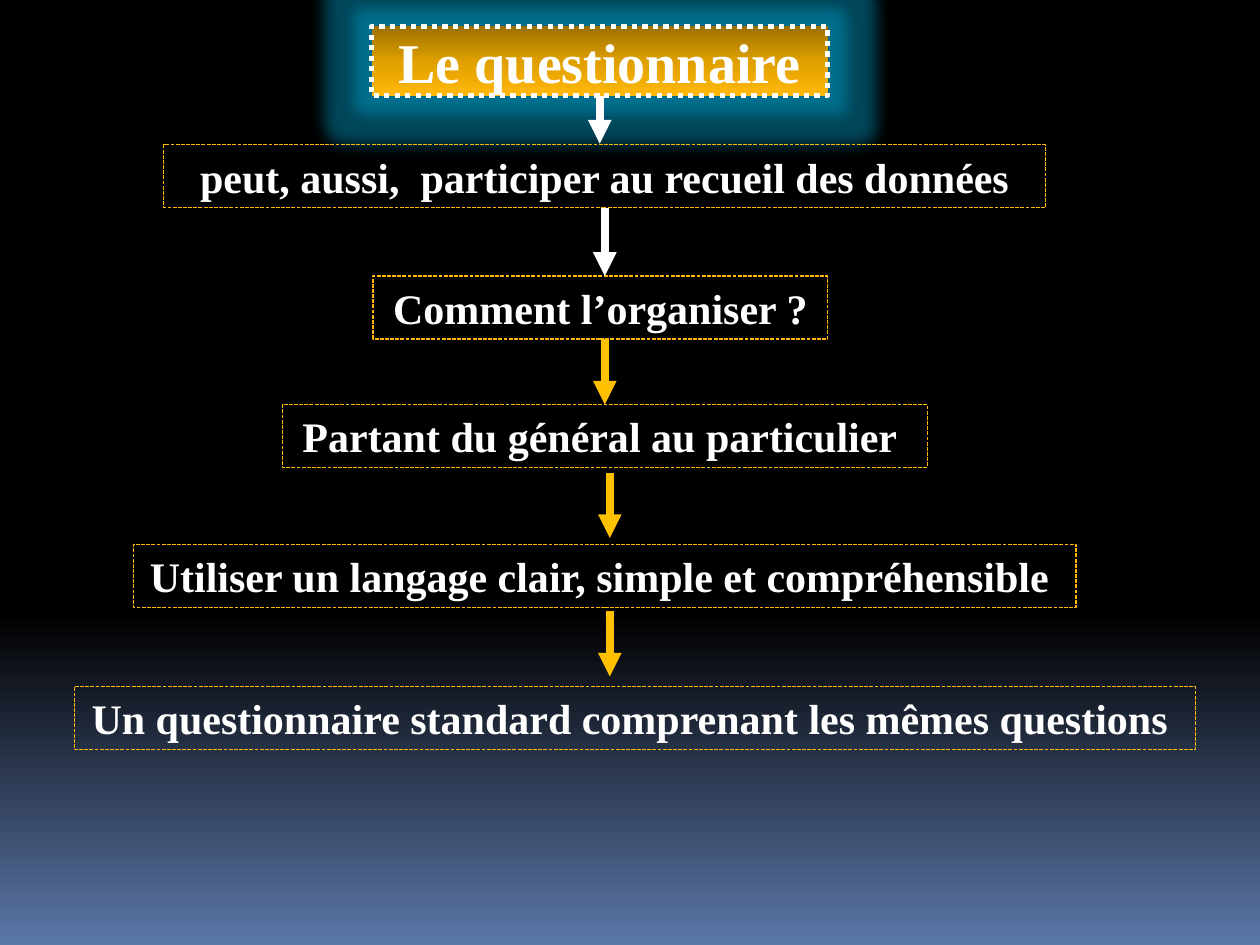
from lxml import etree
from pptx import Presentation
from pptx import util as u
from pptx.dml.color import RGBColor
from pptx.enum import dml, shapes, text
from pptx.oxml.ns import qn

WHITE = RGBColor(0xFF, 0xFF, 0xFF)
BLACK = RGBColor(0, 0, 0)
AMBER = RGBColor(0xFE, 0xB8, 0x0A)
GOLD = RGBColor(0xFF, 0xC0, 0x00)
GOLD_DARK = RGBColor(0x9C, 0x70, 0x00)
GOLD_MID = RGBColor(0xDF, 0x9F, 0x00)
GOLD_LIGHT = RGBColor(0xFF, 0xB8, 0x09)
BLUE = RGBColor(0x5B, 0x77, 0xA8)
GLOW = RGBColor(0x00, 0xAD, 0xDC)
FONT = "Times New Roman"
BOX_H = 0.5


def set_gradient(fill, owner, stops):
    """Fill from top to bottom with (percent, colour) stops."""
    fill.gradient()
    fill.gradient_angle = 270
    gs_list = next(owner.iter(qn("a:gsLst")))
    for gs in list(gs_list):
        gs_list.remove(gs)
    for pos, color in stops:
        gs = etree.SubElement(gs_list, qn("a:gs"), pos=str(pos * 1000))
        etree.SubElement(gs, qn("a:srgbClr"), val=str(color))


def add_glow(sp, color, radius, alpha):
    effects = sp._element.spPr.find(qn("a:effectLst"))
    glow = etree.SubElement(effects, qn("a:glow"), rad=str(int(radius)))
    clr = etree.SubElement(glow, qn("a:srgbClr"), val=str(color))
    etree.SubElement(clr, qn("a:alpha"), val=str(alpha * 1000))


def add_box(s, box, label, size, line_color, line_width, dash):
    sp = s.shapes.add_shape(shapes.MSO_SHAPE.RECTANGLE, *map(u.Inches, box))
    sp.shadow.inherit = False
    sp.fill.background()
    sp.line.color.rgb = line_color
    sp.line.width = u.Pt(line_width)
    sp.line.dash_style = dash
    tf = sp.text_frame
    tf.word_wrap = True
    p = tf.paragraphs[0]
    p.alignment = text.PP_ALIGN.CENTER
    r = p.add_run()
    r.text = label
    r.font.name = FONT
    r.font.size = u.Pt(size)
    r.font.bold = True
    r.font.color.rgb = WHITE
    return sp


def add_title(s, box):
    sp = add_box(s, box, "Le questionnaire", 32, WHITE, 3, dml.MSO_LINE.ROUND_DOT)
    sp.text_frame.vertical_anchor = text.MSO_ANCHOR.MIDDLE
    set_gradient(sp.fill, sp._element.spPr,
                 [(0, GOLD_DARK), (50, GOLD_MID), (100, GOLD_LIGHT)])
    add_glow(sp, GLOW, u.Inches(0.25), 40)
    return sp


def add_step(s, box, label):
    sp = add_box(s, box, label, 24, AMBER, 0.75, dml.MSO_LINE.DASH)
    # Short system dash, which the dash enumeration does not offer
    sp.line._ln.find(qn("a:prstDash")).set("val", "sysDash")
    sp.text_frame.vertical_anchor = text.MSO_ANCHOR.TOP
    sp.text_frame.auto_size = text.MSO_AUTO_SIZE.SHAPE_TO_FIT_TEXT
    return sp


def add_arrow(s, x, top, bottom, color, start=None, end=None):
    c = s.shapes.add_connector(shapes.MSO_CONNECTOR.STRAIGHT,
                               *map(u.Inches, (x, top, x, bottom)))
    c.line.color.rgb = color
    c.line.width = u.Pt(4.5)
    etree.SubElement(c.line._ln, qn("a:tailEnd"), type="triangle")
    etree.SubElement(c._element.spPr, qn("a:effectLst"))
    if start is not None:
        c.begin_connect(start, 2)
    if end is not None:
        c.end_connect(end, 0)


def main():
    prs = Presentation()
    prs.slide_width, prs.slide_height = u.Inches(10), u.Inches(7.5)
    s = prs.slides.add_slide(prs.slide_layouts[6])
    set_gradient(s.background.fill, s._element,
                 [(0, BLACK), (65, BLACK), (100, BLUE)])

    # Title and the chain of steps: left, top, width, wording
    title = add_title(s, (2.95, 0.21, 3.62, 0.55))
    steps = [
        (1.3, 1.15, 7, "peut, aussi,  participer au recueil des données"),
        (2.96, 2.19, 3.61, "Comment l’organiser ?"),
        (2.24, 3.21, 5.12, "Partant du général au particulier "),
        (1.06, 4.32, 7.48, "Utiliser un langage clair, simple et compréhensible "),
        (0.59, 5.45, 8.9, "Un questionnaire standard comprenant les mêmes questions "),
    ]
    collect, organise, general, *_ = [
        add_step(s, (x, y, w, BOX_H), label) for x, y, w, label in steps]

    # Arrows from each step to the next
    add_arrow(s, 4.76, 0.76, 1.14, WHITE, start=title)
    add_arrow(s, 4.8, 1.65, 2.19, WHITE, start=collect)
    add_arrow(s, 4.8, 2.69, 3.21, GOLD, end=general)
    for top in (3.75, 4.85):
        add_arrow(s, 4.84, top, top + 0.52, GOLD)

    prs.save("out.pptx")


if __name__ == "__main__":
    main()
